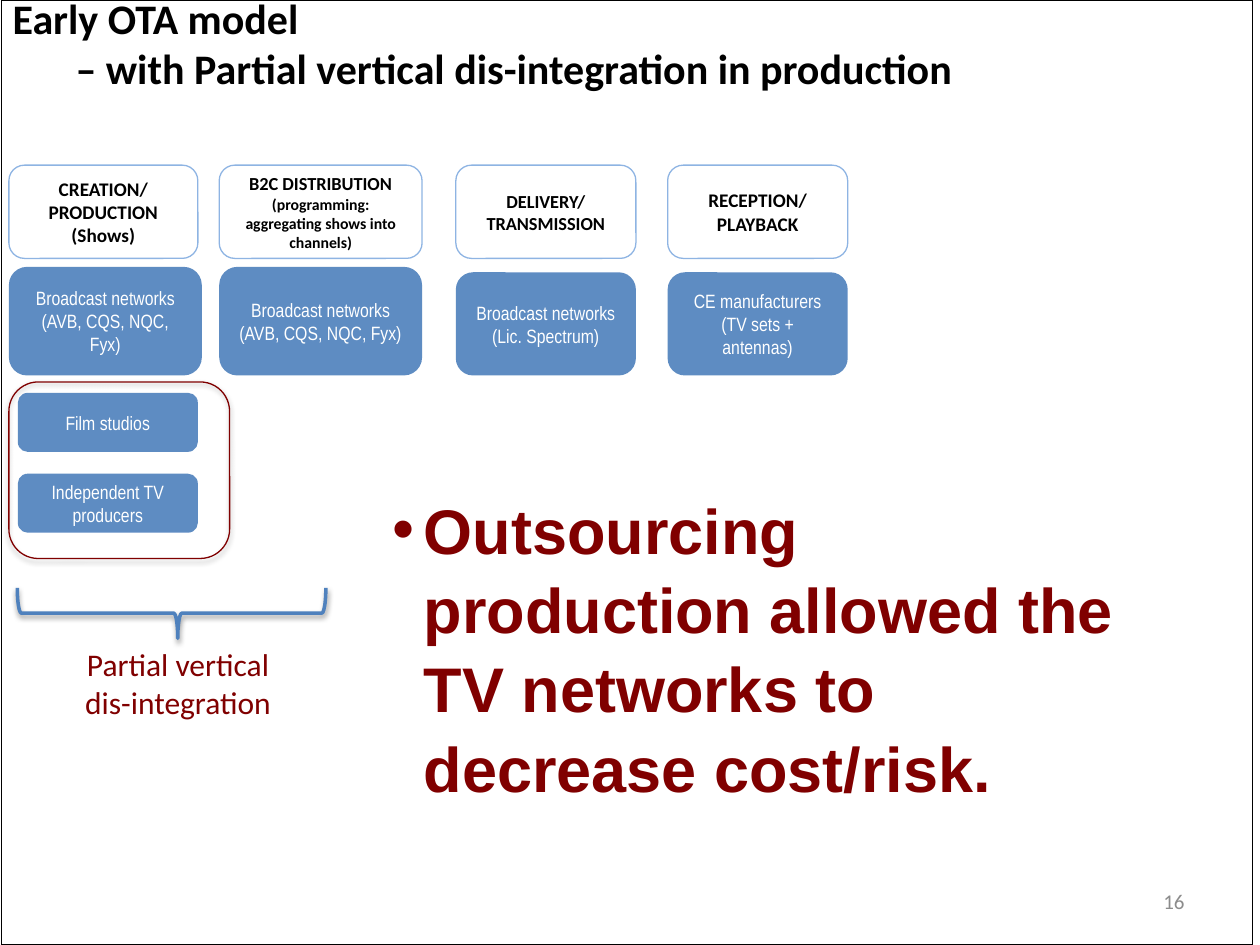
from lxml.etree import SubElement
from pptx import Presentation
from pptx.dml.color import RGBColor
from pptx.enum.shapes import MSO_SHAPE as Shape
from pptx.enum.text import MSO_ANCHOR as Anchor, MSO_AUTO_SIZE as Fit, PP_ALIGN as Align
from pptx.oxml.ns import qn
from pptx.util import Cm, Pt

# Content: each paragraph is a list of (words, type style) runs
TITLE = ["Early OTA model", "– with Partial vertical dis-integration in production"]
TAKEAWAY = "Outsourcing production allowed the TV networks to decrease cost/risk."
BRACE_LABEL = "Partial vertical dis-integration"
PAGE_NUMBER = "16"
NETWORKS = [[("Broadcast networks (AVB, CQS, NQC, Fyx)", "player")]]
STAGES = [  # left, header width, player width, player top, header, players
    (0.18, 3.81, 3.89, 5.38,
     [[("CREATION/PRODUCTION", "stage")], [("(Shows)", "stage")]], NETWORKS),
    (4.42, 4.09, 4.09, 5.38,
     [[("B2C DISTRIBUTION ", "stage_small"),
       ("(programming: aggregating shows into channels)", "stage_note")]], NETWORKS),
    (9.19, 3.63, 3.63, 5.49,
     [[("DELIVERY/TRANSMISSION", "stage_small")]],
     [[("Broadcast networks", "player")], [("(Lic. Spectrum)", "player")]]),
    (13.46, 3.63, 3.63, 5.49,
     [[("RECEPTION/PLAYBACK", "stage")]],
     [[("CE manufacturers", "player")], [("(TV sets + antennas)", "player")]]),
]
OUTSIDE_PRODUCERS = ["Film studios", "Independent TV producers"]

# Theme: colours, and type as (font, size, colour, bold)
THEME = {
    "blue": "4F81BD", "pale_blue": "8EB4E3", "maroon": "800000", "black": "000000",
    "title": ("Calibri", 24, "000000", True),
    "stage": ("Calibri", 11, "000000", True),
    "stage_small": ("Calibri", 10.5, "000000", True),
    "stage_note": ("Calibri", 9, "000000", True),
    "player": ("Arial Narrow", 11, "FFFFFF", False),
    "takeaway": ("Arial", 36, "800000", True),
    "label": ("Calibri", 18, "800000", False),
    "number": ("Calibri", 12, "8C8C8C", False),
}

# Vertical grid in cm
HEADER_TOP, HEADER_HEIGHT = 3.33, 1.88
PLAYER_BOTTOM = 7.57
PRODUCER_TOP, PRODUCER_PITCH = 7.92, 1.63


def rgb(name):
    return RGBColor.from_string(THEME[name])


def write(holder, paragraphs, align=Align.CENTER, anchor=Anchor.MIDDLE):
    frame = holder.text_frame
    frame.word_wrap = True
    frame.auto_size = Fit.NONE
    frame.vertical_anchor = anchor
    for i, runs in enumerate(paragraphs):
        paragraph = frame.paragraphs[0] if i == 0 else frame.add_paragraph()
        paragraph.alignment = align
        for words, style in runs:
            run = paragraph.add_run()
            run.text = words
            font = run.font
            font.name, size, colour, font.bold = THEME[style]
            font.size = Pt(size)
            font.color.rgb = RGBColor.from_string(colour)
    return frame


def place(holder, left, top, width, height):
    holder.left, holder.top = Cm(left), Cm(top)
    holder.width, holder.height = Cm(width), Cm(height)


def add_outline(kind, box, line, weight=0.75):
    shape = slide.shapes.add_shape(kind, *map(Cm, box))
    shape.shadow.inherit = False
    shape.fill.background()
    shape.line.color.rgb = rgb(line)
    shape.line.width = Pt(weight)
    return shape


def add_player(box, paragraphs):
    shape = add_outline(Shape.ROUNDED_RECTANGLE, box, "blue")
    shape.line.fill.background()
    shape.fill.solid()
    shape.fill.fore_color.rgb = rgb("blue")
    colour = shape._element.spPr.find(qn("a:solidFill"))[0]
    SubElement(colour, qn("a:alpha"), val="91000")
    write(shape, paragraphs)


def add_shadow(shape, opacity, distance):
    effects = shape._element.spPr.find(qn("a:effectLst"))
    shadow = SubElement(effects, qn("a:outerShdw"), blurRad=str(Pt(3.1)),
                        dist=str(Pt(distance)), dir="5400000", rotWithShape="0")
    colour = SubElement(shadow, qn("a:srgbClr"), val=THEME["black"])
    SubElement(colour, qn("a:alpha"), val=str(opacity * 1000))


def add_text(box, words, style, align, anchor):
    write(slide.shapes.add_textbox(*map(Cm, box)), [[(words, style)]], align, anchor)


deck = Presentation()
deck.slide_width, deck.slide_height = Cm(25.4), Cm(19.05)
slide = deck.slides.add_slide(deck.slide_layouts[1])

# Title, its second line indented
title = slide.shapes.title
place(title, 0, 0, 23.27, 2.64)
heading = write(title, [[(line, "title")] for line in TITLE], Align.LEFT)
heading.margin_bottom = Cm(1.04)
heading.paragraphs[1]._p.get_or_add_pPr().set("marL", str(Cm(1.27)))

# Takeaway bullet
takeaway = slide.placeholders[1]
place(takeaway, 7.65, 9.7, 15.6, 6.4)
bullet = write(takeaway, [[(TAKEAWAY, "takeaway")]], Align.LEFT, Anchor.TOP).paragraphs[0]
bullet.space_before = Pt(0)
bullet.line_spacing = 1.05
bullet_props = bullet._p.get_or_add_pPr()
bullet_props.set("marL", str(Cm(0.64)))
bullet_props.set("indent", str(-Cm(0.64)))
SubElement(bullet_props, qn("a:buFont"), typeface="Arial")
SubElement(bullet_props, qn("a:buChar"), char="•")

# Value chain: a header and its players per stage
for left, header_width, player_width, player_top, header, players in STAGES:
    header_box = (left, HEADER_TOP, header_width, HEADER_HEIGHT)
    write(add_outline(Shape.ROUNDED_RECTANGLE, header_box, "pale_blue"), header)
    add_player((left, player_top, player_width, PLAYER_BOTTOM - player_top), players)

# Outside producers and the frame around them
for row, producer in enumerate(OUTSIDE_PRODUCERS):
    add_player((0.36, PRODUCER_TOP + row * PRODUCER_PITCH, 3.63, 1.19),
               [[(producer, "player")]])
producer_frame = add_outline(Shape.ROUNDED_RECTANGLE, (0.18, 7.7, 4.45, 3.56), "maroon")
add_shadow(producer_frame, 35, 1.8)

# Brace and its label
brace = add_outline(Shape.LEFT_BRACE, (2.95, 9.25, 1.02, 6.22), "blue", 2)
brace.rotation = 270
brace.adjustments[0], brace.adjustments[1] = 0.08, 0.52
add_shadow(brace, 38, 1.6)
add_text((1.09, 12.88, 5, 1.8), BRACE_LABEL, "label", Align.CENTER, Anchor.TOP)

# Slide border and page number
add_outline(Shape.RECTANGLE, (0.03, 0, 25.22, 19.05), "black")
add_text((18.21, 17.65, 5.92, 1.02), PAGE_NUMBER, "number", Align.RIGHT, Anchor.MIDDLE)

deck.save("out.pptx")
